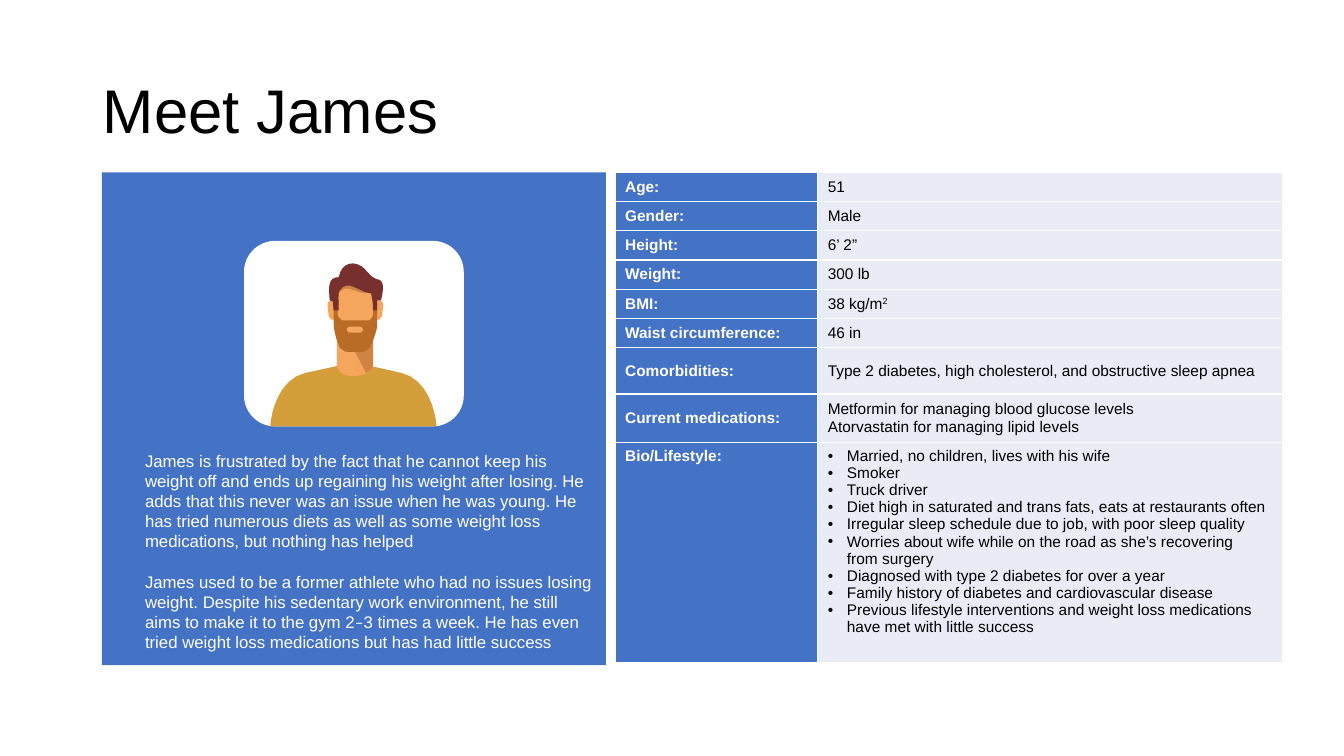
from dataclasses import dataclass

from lxml.etree import SubElement
from pptx import Presentation
from pptx.dml.color import RGBColor
from pptx.enum.shapes import MSO_SHAPE as SHAPE
from pptx.enum.text import MSO_ANCHOR as ANCHOR, MSO_AUTO_SIZE as AUTO, PP_ALIGN as ALIGN
from pptx.oxml.ns import qn
from pptx.util import Inches, Pt


@dataclass(frozen=True)
class Theme:
    font: str = "Arial"
    dash_font: str = "Calibri"
    blue: str = "4472C4"
    pale: str = "E9EBF5"
    white: str = "FFFFFF"
    black: str = "000000"
    shirt: str = "D49E3B"
    skin: str = "F6A55C"
    shade: str = "D18343"
    beard: str = "B86C26"
    hair: str = "78302F"
    title_size: int = 44
    story_size: int = 12
    table_size: int = 11


T = Theme()

STORY = [
    ["James is frustrated by the fact that he cannot keep his weight off and ends up "
     "regaining his weight after losing. He adds that this never was an issue when he was "
     "young. He has tried numerous diets as well as some weight loss medications, but "
     "nothing has helped"],
    ["James used to be a former athlete who had no issues losing weight. Despite his "
     "sedentary work environment, he still aims to make it to the gym 2", "–",
     "3 times a week. He has even tried weight loss medications but has had little success"],
]
LIFESTYLE = [
    "Married, no children, lives with his wife",
    "Smoker",
    "Truck driver",
    "Diet high in saturated and trans fats, eats at restaurants often",
    "Irregular sleep schedule due to job, with poor sleep quality",
    "Worries about wife while on the road as she’s recovering \vfrom surgery",
    "Diagnosed with type 2 diabetes for over a year",
    "Family history of diabetes and cardiovascular disease",
    "Previous lifestyle interventions and weight loss medications have met with little success",
]
PROFILE = [  # label, lines, row height
    ("Age:", ["51"], 0.29),
    ("Gender:", ["Male"], 0.29),
    ("Height:", ["6’ 2”"], 0.29),
    ("Weight:", ["300 lb"], 0.29),
    ("BMI:", ["38 kg/m^2"], 0.29),
    ("Waist circumference:", ["46 in"], 0.29),
    ("Comorbidities:", ["Type 2 diabetes, high cholesterol, and obstructive sleep apnea"], 0.46),
    ("Current medications:", ["Metformin for managing blood glucose levels",
                              "Atorvastatin for managing lipid levels"], 0.48),
    ("Bio/Lifestyle:", LIFESTYLE, 2.19),
]

# Portrait outlines in hundredths of an inch from the card's corner:
# a pair is a line to a point, six numbers are a cubic curve.
TORSO = [(191, 184), (190, 169, 182, 137, 156, 131), (125, 124), (93, 124), (61, 131),
         (35, 137, 27, 169, 26, 184)]
NECK = [(92, 93), (92, 123), (92, 129, 98, 134, 109, 134), (120, 134, 127, 129, 127, 123),
        (127, 93)]
NECK_SHADE = [(128, 123), (128, 94), (104, 98), (121, 131), (125, 129, 128, 126, 128, 123)]
EAR = [(128, 73), (128, 76, 129, 78, 132, 78), (134, 79, 136, 77, 137, 74), (138, 64),
       (138, 61, 137, 59, 134, 59), (132, 58, 130, 60, 129, 63)]
BEARD = [(132, 62), (128, 62), (128, 73), (128, 75, 127, 76, 126, 77),
         (126, 78, 124, 79, 123, 79), (98, 79), (97, 79, 96, 78, 95, 77),
         (94, 76, 93, 75, 93, 73), (93, 62), (89, 62), (89, 83), (89, 90, 94, 106, 96, 107),
         (98, 108, 100, 110, 102, 110), (118, 110), (120, 110, 122, 108, 124, 107),
         (126, 105, 133, 87, 132, 83)]
FRINGE_SHADE = [(94, 52), (103, 41, 109, 53, 125, 52), (125, 51),
                (113, 50, 104, 36, 95, 48), (94, 49, 94, 51, 93, 52)]
HAIR = [(132, 38), (128, 37, 124, 33, 120, 28), (111, 19, 97, 20, 94, 36),
        (83, 36, 84, 46, 85, 59), (88, 60), (89, 69), (94, 69), (94, 59, 93, 52, 95, 49),
        (104, 37, 113, 51, 126, 52), (127, 56, 128, 61, 128, 69), (132, 69), (132, 59),
        (136, 59), (140, 42, 137, 39, 132, 38)]
FACE_WIDTH = 221  # twice the x of the face's axis


def rgb(color):
    return RGBColor.from_string(color)


def style(font, size, color, bold=False):
    font.name, font.size, font.bold = T.font, Pt(size), bold
    font.color.rgb = rgb(color)


def paint(sp, color):
    sp.shadow.inherit = False
    sp.fill.solid()
    sp.fill.fore_color.rgb = rgb(color)
    sp.line.fill.background()


def add_block(s, kind, x, y, w, h, color, corner=None):
    sp = s.shapes.add_shape(kind, Inches(x), Inches(y), Inches(w), Inches(h))
    paint(sp, color)
    if corner is not None:
        sp.adjustments[0] = corner


def flatten(outline, steps=8):
    """Turn lines and cubic curves into a list of points."""
    points = []
    for seg in outline:
        if len(seg) == 2:
            points.append(seg)
            continue
        controls = [points[-1], seg[:2], seg[2:4], seg[4:]]
        for t in (i / steps for i in range(1, steps + 1)):
            u = 1 - t
            weights = (u ** 3, 3 * u * u * t, 3 * u * t * t, t ** 3)
            points.append(tuple(sum(k * c[axis] for k, c in zip(weights, controls))
                                for axis in (0, 1)))
    return points


def add_portrait(s, x, y, w, h):
    def draw(outline, color, mirror=False):
        pts = [(Inches(x + (FACE_WIDTH - px if mirror else px) / 100), Inches(y + py / 100))
               for px, py in flatten(outline)]
        fb = s.shapes.build_freeform(*pts[0])
        fb.add_line_segments(pts[1:], close=True)
        paint(fb.convert_to_shape(), color)

    add_block(s, SHAPE.ROUNDED_RECTANGLE, x, y, w, h, T.white)
    draw(TORSO, T.shirt)
    draw(NECK, T.skin)
    draw(NECK_SHADE, T.shade)
    add_block(s, SHAPE.ROUNDED_RECTANGLE, x + 0.92, y + 0.42, 0.37, 0.53, T.skin, 0.2)
    draw(EAR, T.skin)
    draw(EAR, T.skin, mirror=True)
    draw(BEARD, T.beard)
    draw(FRINGE_SHADE, T.shade)
    draw(HAIR, T.hair)
    add_block(s, SHAPE.ROUNDED_RECTANGLE, x + 1.02, y + 0.85, 0.16, 0.06, T.skin, 0.5)


def add_story_panel(s, x, y, w, h):
    add_block(s, SHAPE.RECTANGLE, x, y, w, h, T.blue)
    tf = s.shapes.add_textbox(Inches(x + 0.33), Inches(y + 2.71),
                              Inches(w - 0.33), Inches(2.12)).text_frame
    tf.word_wrap = True
    for i, parts in enumerate(STORY):
        p = tf.add_paragraph() if i else tf.paragraphs[0]
        p.space_before = Pt(14.4 * i)
        style(p.font, T.story_size, T.white)
        for part in parts:
            r = p.add_run()
            r.text = part
            if part == "–":
                r.font.name = T.dash_font
    add_portrait(s, x + 1.41, y + 0.68, 2.18, 1.84)


def add_borders(cell):
    tc_pr = cell._tc.get_or_add_tcPr()
    for side in ("lnL", "lnR", "lnT", "lnB"):
        ln = SubElement(tc_pr, qn(f"a:{side}"), w=str(Pt(1)))
        SubElement(SubElement(ln, qn("a:solidFill")), qn("a:srgbClr"), val=T.white)


def add_bullet(p):
    p_pr = p._p.get_or_add_pPr()
    p_pr.set("marL", str(Inches(0.19)))
    p_pr.set("indent", str(-Inches(0.19)))
    SubElement(p_pr, qn("a:buFont"), typeface=T.font)
    SubElement(p_pr, qn("a:buChar"), char="•")


def fill_cell(cell, lines, fill, color, bold=False, bulleted=False):
    """Write the lines into a cell; text after ^ is superscript."""
    add_borders(cell)
    cell.fill.solid()
    cell.fill.fore_color.rgb = rgb(fill)
    tf = cell.text_frame
    for i, line in enumerate(lines):
        p = tf.add_paragraph() if i else tf.paragraphs[0]
        base, _, power = line.partition("^")
        p.text = base
        if power:
            r = p.add_run()
            r.text = power
            r._r.get_or_add_rPr().set("baseline", "30000")
        if bulleted:
            add_bullet(p)
        style(p.font, T.table_size, color, bold)


def add_profile_table(s, x, y, w, h):
    table = s.shapes.add_table(len(PROFILE), 2, Inches(x), Inches(y), Inches(w), Inches(h)).table
    table.first_row = table.horz_banding = False
    table.columns[0].width, table.columns[1].width = Inches(2.01), Inches(w - 2.01)
    for i, (label, lines, height) in enumerate(PROFILE):
        table.rows[i].height = Inches(height)
        bulleted = lines is LIFESTYLE
        fill_cell(table.cell(i, 0), [label], T.blue, T.white, bold=True)
        fill_cell(table.cell(i, 1), lines, T.pale, T.black, bulleted=bulleted)
        for cell in table.rows[i].cells:
            cell.vertical_anchor = ANCHOR.TOP if bulleted else ANCHOR.MIDDLE


def set_title(s, text, x, y, w, h):
    sp = s.shapes.title
    sp.left, sp.top, sp.width, sp.height = map(Inches, (x, y, w, h))
    tf = sp.text_frame
    tf.text, tf.vertical_anchor, tf.auto_size = text, ANCHOR.MIDDLE, AUTO.NONE
    p = tf.paragraphs[0]
    p.alignment, p.line_spacing = ALIGN.LEFT, 0.9
    style(p.font, T.title_size, T.black)


def main():
    prs = Presentation()
    prs.slide_width, prs.slide_height = Inches(13.33), Inches(7.5)
    s = prs.slides.add_slide(prs.slide_layouts[5])
    set_title(s, "Meet James", 0.92, 0.4, 11.5, 1.45)
    add_story_panel(s, 1.01, 1.71, 5, 4.89)
    add_profile_table(s, 6.1, 1.71, 6.62, 4.89)
    prs.save("out.pptx")


if __name__ == "__main__":
    main()
